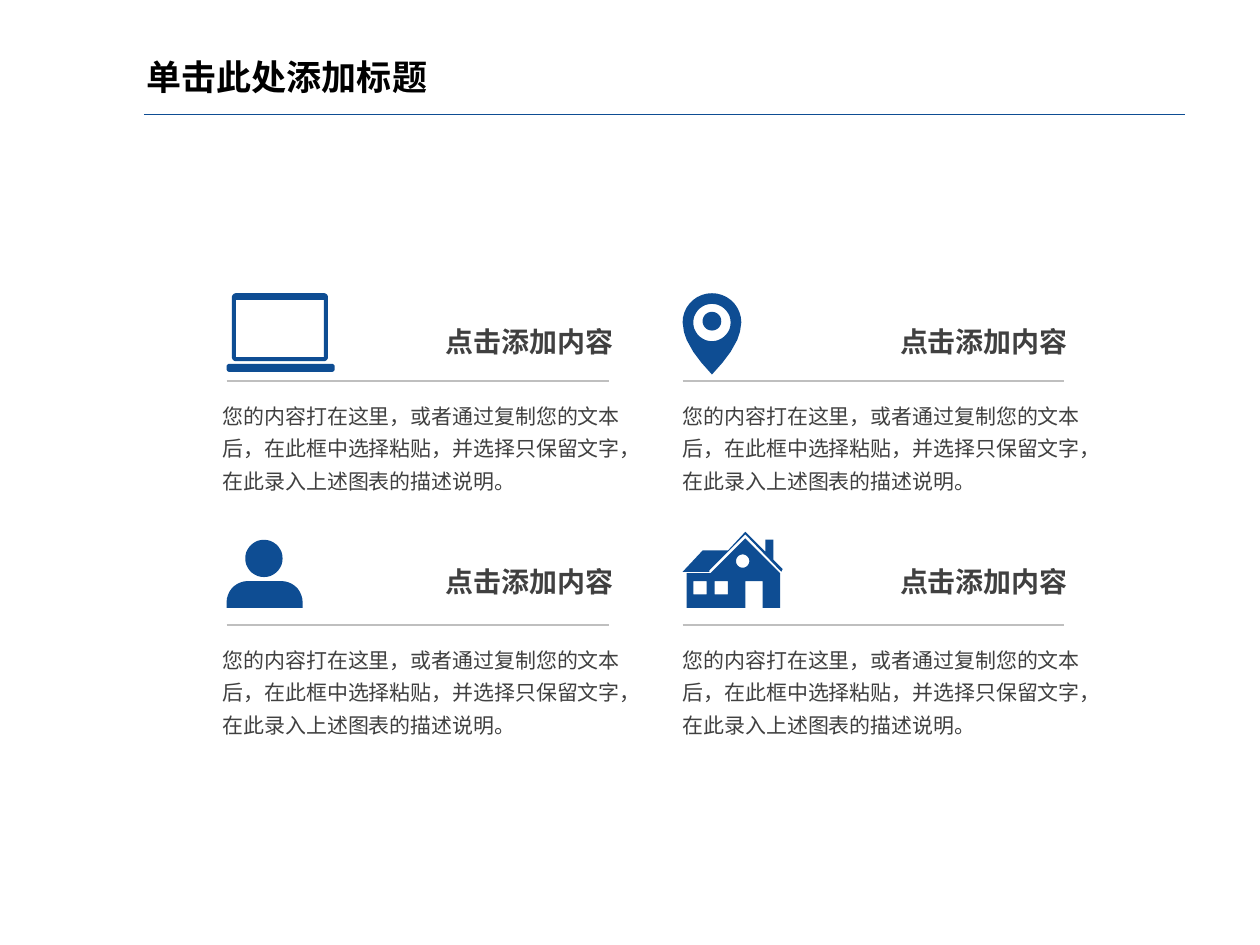
from math import cos, sin, radians
from lxml.etree import SubElement
from pptx import Presentation
from pptx.dml.color import RGBColor
from pptx.enum.shapes import MSO_CONNECTOR
from pptx.enum.text import MSO_ANCHOR, MSO_AUTO_SIZE, PP_ALIGN
from pptx.oxml.ns import qn
from pptx.util import Inches, Pt

# Content
TITLE = "单击此处添加标题"
HEAD = "点击添加内容"
BODY = "您的内容打在这里，或者通过复制您的文本后，在此框中选择粘贴，并选择只保留文字，在此录入上述图表的描述说明。"
CARDS = [  # icon, column, row, icon height above the rule
    ("laptop", 0, 0, 0.66),
    ("pin", 1, 0, 0.66),
    ("person", 0, 1, 0.64),
    ("house", 1, 1, 0.7),
]

# Grid and style
COLS = [(1.7, 4.57, 1.6), (5.12, 7.98, 5.05)]  # rule left, rule right, body left
ROWS = [(2.86, 2.4), (4.69, 4.2)]  # rule top, heading top
FONT = "Noto Sans CJK SC"
BLUE, GREY, DARK, BLACK = "0E4D93", "BFBFBF", "404040", "000000"


# Outlines, in inches from the icon's top left corner
def arc(x, y, r, start=0, end=360, step=10):
    return [(x + r * cos(radians(a)), y + r * sin(radians(a)))
            for a in range(start, end + 1, step)]


def box(x, y, w, h):
    return [(x, y), (x + w, y), (x + w, y + h), (x, y + h)]


def round_box(x, y, w, h, r):
    mids = box(x + r, y + r, w - 2 * r, h - 2 * r)
    return [p for i, (a, b) in enumerate(mids)
            for p in arc(a, b, r, 180 + 90 * i, 270 + 90 * i)]


ICONS = {
    "laptop": [round_box(0, 0.53, 0.81, 0.06, 0.02),
               round_box(0.04, 0, 0.72, 0.51, 0.03),
               box(0.07, 0.05, 0.66, 0.43)],
    "pin": [arc(0.22, 0.22, 0.22, 180, 360)
            + [(0.43, 0.29), (0.41, 0.35), (0.36, 0.44), (0.3, 0.52), (0.22, 0.61),
               (0.14, 0.52), (0.08, 0.44), (0.03, 0.35), (0.01, 0.29)],
            arc(0.22, 0.22, 0.14),
            arc(0.22, 0.21, 0.07)],
    "person": [arc(0.28, 0.14, 0.14),
               [(0, 0.51)] + arc(0.16, 0.47, 0.16, 180, 270)
               + arc(0.41, 0.47, 0.16, 270, 360) + [(0.57, 0.51)]],
    "house": [[(0.73, 0.31), (0.47, 0.05), (0.21, 0.31), (0.03, 0.31), (0.03, 0.57),
               (0.47, 0.57), (0.47, 0.37), (0.6, 0.37), (0.6, 0.57), (0.73, 0.57)],
              box(0.08, 0.37, 0.1, 0.1),
              box(0.24, 0.37, 0.1, 0.1),
              arc(0.45, 0.22, 0.05),
              [(0.75, 0.28), (0.74, 0.3), (0.47, 0.02), (0.2, 0.29), (0.2, 0.3),
               (0, 0.3), (0.15, 0.14), (0.34, 0.14), (0.47, 0), (0.62, 0.15),
               (0.62, 0.06), (0.68, 0.06), (0.68, 0.21)]],
}


def color(code):
    return RGBColor.from_string(code)


def write(text, x, y, w, h, size, tint=DARK, bold=False, align=PP_ALIGN.LEFT,
          anchor=MSO_ANCHOR.TOP, wrap=True, pad=(0.07, 0.04), space=None):
    frame = slide.shapes.add_textbox(*map(Inches, (x, y, w, h))).text_frame
    frame.word_wrap = wrap
    frame.auto_size = MSO_AUTO_SIZE.SHAPE_TO_FIT_TEXT
    frame.vertical_anchor = anchor
    frame.margin_left = frame.margin_right = Inches(pad[0])
    frame.margin_top = frame.margin_bottom = Inches(pad[1])
    para = frame.paragraphs[0]
    para.alignment = align
    para.line_spacing = space
    run = para.add_run()
    run.text = text
    font = run.font
    font.name, font.size, font.bold = FONT, Pt(size), bold
    font.color.rgb = color(tint)
    SubElement(font._element, qn("a:ea")).set("typeface", FONT)


def rule(x, end, y, tint):
    line = slide.shapes.add_connector(
        MSO_CONNECTOR.STRAIGHT, *map(Inches, (x, y, end, y)))
    line.line.color.rgb = color(tint)
    line.line.width = Pt(0.75)
    SubElement(line._element.spPr, qn("a:effectLst"))


def draw(paths, x, y):
    unit = 1000  # steps to the inch
    loops = [[(round(a * unit), round(b * unit)) for a, b in path] for path in paths]
    pen = slide.shapes.build_freeform(*loops[0][0], scale=Inches(1) / unit)
    for i, loop in enumerate(loops):
        if i:
            pen.move_to(*loop[0])
        pen.add_line_segments(loop[1:], close=True)
    icon = pen.convert_to_shape(Inches(x), Inches(y))
    icon.shadow.inherit = False
    icon.fill.solid()
    icon.fill.fore_color.rgb = color(BLUE)
    icon.line.fill.background()


deck = Presentation()
deck.slide_width, deck.slide_height = Inches(9.45), Inches(7.09)
slide = deck.slides.add_slide(deck.slide_layouts[6])

# Title
rule(1.08, 8.89, 0.86, BLUE)
write(TITLE, 1, 0.37, 7.89, 0.42, 18.9, tint=BLACK, bold=True, pad=(0.1, 0.05))

# Four cards
for name, col, row, rise in CARDS:
    left, right, edge = COLS[col]
    base, top = ROWS[row]
    draw(ICONS[name], left, base - rise)
    rule(left, right, base, GREY)
    write(HEAD, right - 1.32, top, 1.42, 0.33, 15.1, bold=True,
          align=PP_ALIGN.RIGHT, anchor=MSO_ANCHOR.MIDDLE, wrap=False)
    write(BODY, edge, base + 0.07, 3.15, 0.82, 11.3, space=1.3)

deck.save("out.pptx")
